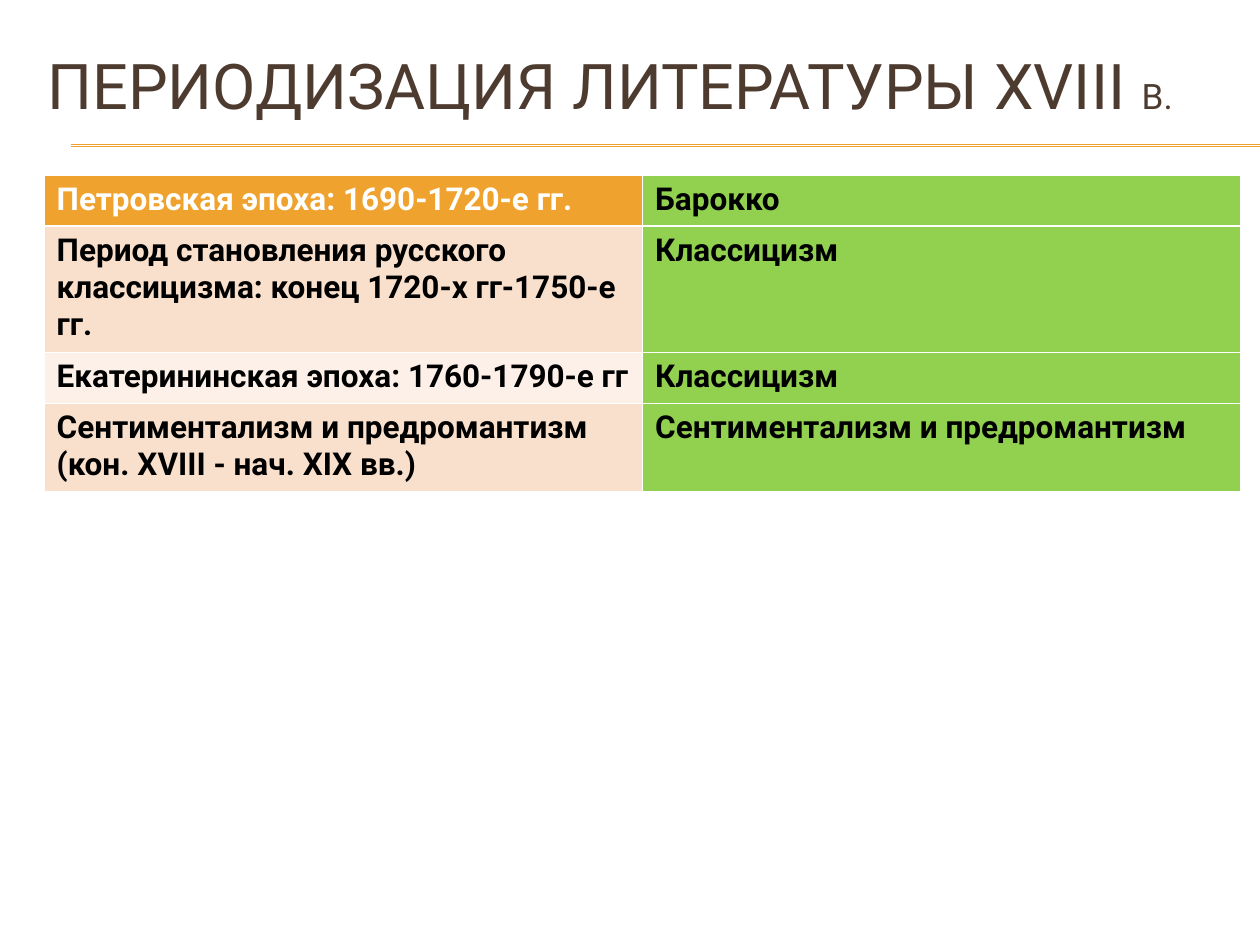
from pptx import Presentation
from pptx.dml.color import RGBColor
from pptx.enum.shapes import MSO_CONNECTOR
from pptx.enum.text import MSO_ANCHOR
from pptx.oxml.ns import qn
from pptx.util import Cm, Pt
from lxml.etree import SubElement

WHITE = RGBColor(0xFF, 0xFF, 0xFF)
BLACK = RGBColor(0, 0, 0)
BROWN = RGBColor(0x4E, 0x3B, 0x30)
ORANGE = RGBColor(0xF0, 0xA2, 0x2E)
GREEN = RGBColor(0x92, 0xD0, 0x50)
PEACH = RGBColor(0xF9, 0xE0, 0xCD)
CREAM = RGBColor(0xFC, 0xF0, 0xE8)
FONT = "Roboto"

deck = Presentation()
deck.slide_width, deck.slide_height = Cm(25.4), Cm(19.05)
slide = deck.slides.add_slide(deck.slide_layouts[6])

for top in (2.92, 2.95):
    rule = slide.shapes.add_connector(
        MSO_CONNECTOR.STRAIGHT, Cm(1.43), Cm(top), Cm(25.4), Cm(top))
    rule.line.color.rgb = ORANGE
    rule.line.width = Pt(0.75)
    SubElement(rule._element.spPr, qn("a:effectLst"))

title = slide.shapes.add_textbox(Cm(0.71), Cm(0.53), Cm(24.13), Cm(2.34))
frame = title.text_frame
frame.word_wrap = True
frame.vertical_anchor = MSO_ANCHOR.MIDDLE
for text, size in (("ПЕРИОДИЗАЦИЯ ЛИТЕРАТУРЫ XVIII ", 36), ("В.", 20)):
    run = frame.paragraphs[0].add_run()
    run.text = text
    run.font.name = FONT
    run.font.size = Pt(size)
    run.font.color.rgb = BROWN

rows = [
    ("Петровская эпоха: 1690-1720-е гг.", "Барокко", ORANGE, WHITE),
    ("Период становления русского классицизма: конец 1720-х гг-1750-е гг.",
     "Классицизм", PEACH, BLACK),
    ("Екатерининская эпоха: 1760-1790-е гг", "Классицизм", CREAM, BLACK),
    ("Сентиментализм и предромантизм (кон. XVIII - нач. XIX вв.)",
     "Сентиментализм и предромантизм", PEACH, BLACK),
]
table = slide.shapes.add_table(
    len(rows), 2, Cm(0.89), Cm(3.53), Cm(24.13), Cm(4.12)).table
for row, (era, style, fill, ink) in enumerate(rows):
    for col, (text, back, tint) in enumerate(
            ((era, fill, ink), (style, GREEN, BLACK))):
        cell = table.cell(row, col)
        cell.fill.solid()
        cell.fill.fore_color.rgb = back
        cell.text_frame.text = text
        font = cell.text_frame.paragraphs[0].runs[0].font
        font.name = FONT
        font.size = Pt(18)
        font.bold = True
        font.color.rgb = tint

deck.save("out.pptx")
